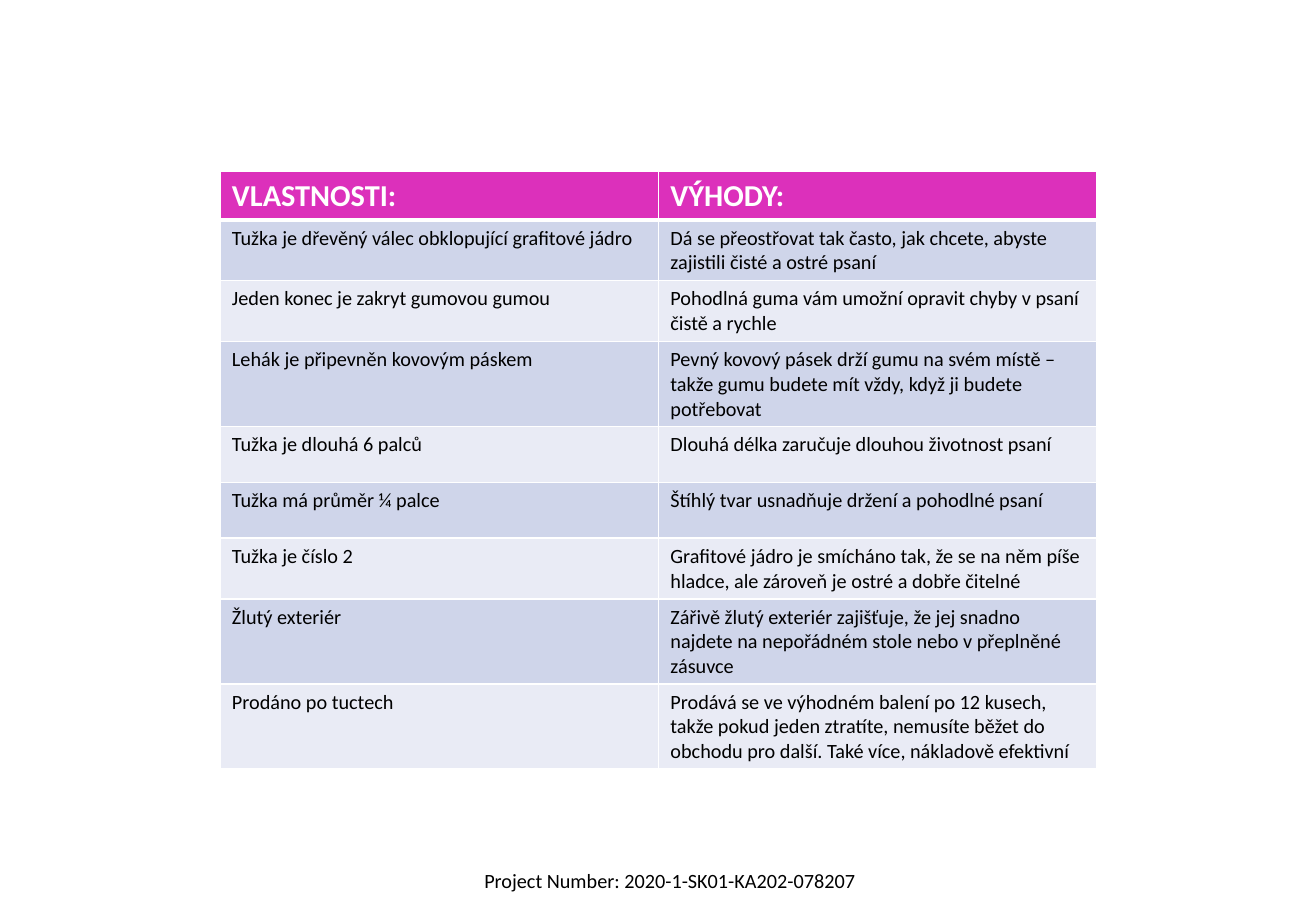
from dataclasses import dataclass

from lxml.etree import SubElement
from pptx import Presentation
from pptx.dml.color import RGBColor as RGB
from pptx.enum.text import PP_ALIGN as Align
from pptx.oxml.ns import qn
from pptx.table import _Cell as Cell
from pptx.text.text import _Paragraph as Paragraph
from pptx.util import Pt

FONT = "Calibri"
COLORS = {
    "header": "DC30BB",
    "band_dark": "CFD5EA",
    "band_light": "E9EBF5",
    "white": "FFFFFF",
    "black": "000000",
}


@dataclass(frozen=True)
class RowStyle:
    fill: str
    color: str
    size: float
    bold: bool
    height: float
    top: float = 1
    bottom: float = 1


@dataclass(frozen=True)
class Feature:
    trait: str
    benefit: str


HEADING = Feature("VLASTNOSTI:", "VÝHODY:")
FEATURES = [
    Feature("Tužka je dřevěný válec obklopující grafitové jádro",
            "Dá se přeostřovat tak často, jak chcete, abyste zajistili čisté a ostré psaní"),
    Feature("Jeden konec je zakryt gumovou gumou",
            "Pohodlná guma vám umožní opravit chyby v psaní čistě a rychle"),
    Feature("Lehák je připevněn kovovým páskem",
            "Pevný kovový pásek drží gumu na svém místě – takže gumu budete mít vždy, "
            "když ji budete potřebovat"),
    Feature("Tužka je dlouhá 6 palců",
            "Dlouhá délka zaručuje dlouhou životnost psaní"),
    Feature("Tužka má průměr ¼ palce",
            "Štíhlý tvar usnadňuje držení a pohodlné psaní"),
    Feature("Tužka je číslo 2",
            "Grafitové jádro je smícháno tak, že se na něm píše hladce, "
            "ale zároveň je ostré a dobře čitelné"),
    Feature("Žlutý exteriér",
            "Zářivě žlutý exteriér zajišťuje, že jej snadno najdete na nepořádném stole "
            "nebo v přeplněné zásuvce"),
    Feature("Prodáno po tuctech",
            "Prodává se ve výhodném balení po 12 kusech, takže pokud jeden ztratíte, "
            "nemusíte běžet do obchodu pro další. Také více, nákladově efektivní"),
]


def add_run(p: Paragraph, text: str, size: float, color: str, bold: bool = False) -> None:
    r = p.add_run()
    r.text = text
    r.font.name = FONT
    r.font.size = Pt(size)
    r.font.bold = bold
    r.font.color.rgb = RGB.from_string(COLORS[color])


def add_border(cell: Cell, side: str, width: float) -> None:
    tc_pr = cell._tc.get_or_add_tcPr()
    line = SubElement(tc_pr, qn(f"a:ln{side}"), w=str(Pt(width)))
    fill = SubElement(line, qn("a:solidFill"))
    SubElement(fill, qn("a:srgbClr"), val=COLORS["white"])


def fill_cell(cell: Cell, text: str, style: RowStyle) -> None:
    # Borders come before the fill in the cell properties
    for side, width in (("L", 1), ("R", 1), ("T", style.top), ("B", style.bottom)):
        add_border(cell, side, width)
    cell.fill.solid()
    cell.fill.fore_color.rgb = RGB.from_string(COLORS[style.fill])
    add_run(cell.text_frame.paragraphs[0], text, style.size, style.color, style.bold)


def row_style(index: int) -> RowStyle:
    if index == 0:
        return RowStyle("header", "white", 18, True, 28.4, bottom=3)
    band = "band_dark" if index % 2 else "band_light"
    return RowStyle(band, "black", 12, False, 33.1, top=3 if index == 1 else 1)


def main() -> None:
    prs = Presentation()
    prs.slide_width, prs.slide_height = Pt(780), Pt(540)
    s = prs.slides.add_slide(prs.slide_layouts[6])

    # Project number
    sp = s.shapes.add_textbox(Pt(269.3), Pt(511.2), Pt(255.6), Pt(21.6))
    tf = sp.text_frame
    tf.word_wrap = False
    p = tf.paragraphs[0]
    p.alignment = Align.CENTER
    add_run(p, "Project Number: 2020-1-SK01-KA202-078207", 12, "black")

    # Features and benefits; rows grow with their text
    rows = [HEADING, *FEATURES]
    table = s.shapes.add_table(
        len(rows), 2, Pt(130.3), Pt(101.5), Pt(519.8), Pt(293.2)).table
    for i, feature in enumerate(rows):
        style = row_style(i)
        table.rows[i].height = Pt(style.height)
        for j, text in enumerate((feature.trait, feature.benefit)):
            fill_cell(table.cell(i, j), text, style)

    prs.save("out.pptx")


if __name__ == "__main__":
    main()
